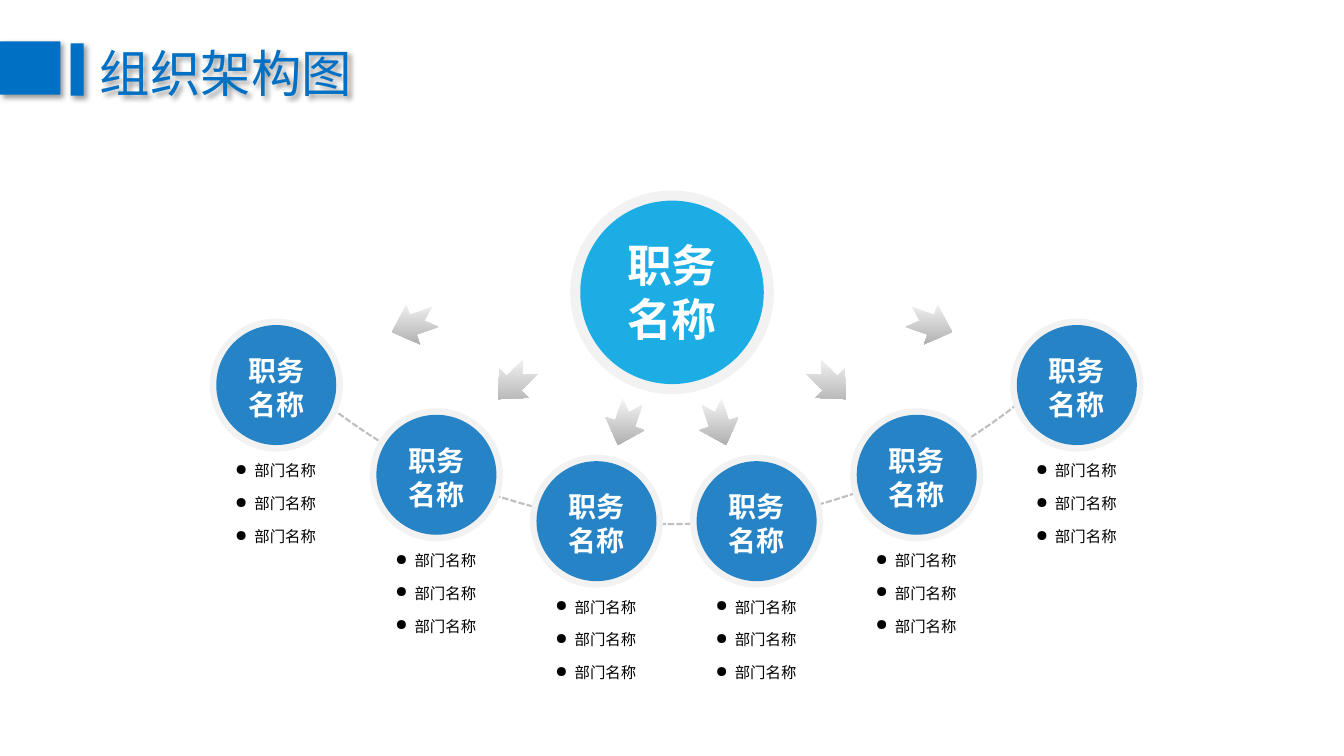
import math

import lxml.etree
import pptx
import pptx.dml.color
import pptx.enum.shapes
import pptx.enum.text
import pptx.oxml.ns
import pptx.util

WIDE, HIGH = 13.33, 7.5
MID = WIDE / 2
TITLE = "组织架构图"
ROLE = ["职务", "名称"]
UNITS = ["部门名称"] * 3
LEVELS = [3.82, 4.71, 5.17, 5.17, 4.71, 3.82]  # centre of each node, left to right
FIRST, PITCH, STEP = 2.74, 1.588, 0.325
BARS = [(0, 0.41, 0.6, 0.53), (0.7, 0.43, 0.13, 0.52)]
ARROWS = [(6.2, 4.2, 108.6), (5.1, 3.8, 134.8), (4.1, 3.22, 160.9)]
ARC = {"radius": 5.525, "base": 5.2, "half": 43.7}
BLUE, RING, HUB, NODE, DASH = "0070C4", "F2F2F2", "1CADE4", "2683C6", "BFBFBF"
FADE = ["FAFAFA", "A6A6A6"]
HEAD = {"size": 36, "name": "Noto Sans CJK SC", "bold": False, "color": BLUE}
BIG = {"size": 32, "name": "Calibri", "bold": True, "color": "FFFFFF"}
SMALL = {**BIG, "size": 20}
ITEM = {"size": 11, "name": "Calibri", "bold": False, "color": "000000"}

KIND = pptx.enum.shapes.MSO_SHAPE
ALIGN = pptx.enum.text.PP_ALIGN
inch = pptx.util.Inches


def rgb(code):
    return pptx.dml.color.RGBColor.from_string(code)


def add(parent, tag, **attrs):
    """Append a DrawingML element with the given attributes."""
    node = lxml.etree.SubElement(parent, pptx.oxml.ns.qn(tag))
    for key, value in attrs.items():
        node.set(key, str(value))
    return node


def shade(shape):
    """Give the shape a soft shadow to the lower right."""
    shape.shadow.inherit = False
    effects = shape._element.spPr.find(pptx.oxml.ns.qn("a:effectLst"))
    outer = add(effects, "a:outerShdw", blurRad=50800, dist=38100,
                dir=2700000, algn="tl", rotWithShape=0)
    add(add(outer, "a:srgbClr", val="000000"), "a:alpha", val=40000)


def style(para, form, align):
    para.alignment = align
    for run in para.runs:
        for key in ("name", "bold"):
            setattr(run.font, key, form[key])
        run.font.size = pptx.util.Pt(form["size"])
        run.font.color.rgb = rgb(form["color"])
        add(run._r.get_or_add_rPr(), "a:ea", typeface=form["name"])


def draw(kind, box, fill):
    shape = slide.shapes.add_shape(kind, *map(inch, box))
    shape.shadow.inherit = False
    shape.line.fill.background()
    shape.fill.solid()
    shape.fill.fore_color.rgb = rgb(fill)
    return shape


def disc(x, y, size, fill):
    draw(KIND.OVAL, (x - size / 2, y - size / 2, size, size), fill)


def write(box, lines, form, wrap=True):
    frame = slide.shapes.add_textbox(*map(inch, box)).text_frame
    frame.word_wrap = wrap
    frame.text = "\n".join(lines)
    for para in frame.paragraphs:
        style(para, form, ALIGN.CENTER)
    return frame


def bullet(para):
    props = para._p.get_or_add_pPr()
    props.set("marL", str(inch(0.19)))
    props.set("indent", str(-inch(0.19)))
    add(props, "a:buChar", char="●")


def arc():
    """Draw the dashed curve that joins the nodes."""
    radius, half = ARC["radius"], ARC["half"]
    top = ARC["base"] - radius
    turns = [math.radians(half * n / 30) for n in range(-30, 31)]
    points = [(inch(MID + radius * math.sin(t)), inch(top + radius * math.cos(t)))
              for t in turns]
    pen = slide.shapes.build_freeform(*points[0])
    pen.add_line_segments(points[1:], close=False)
    curve = pen.convert_to_shape()
    curve.shadow.inherit = False
    curve.fill.background()
    curve.line.color.rgb = rgb(DASH)
    curve.line.width = pptx.util.Pt(1.5)
    add(curve.line._get_or_add_ln(), "a:prstDash", val="sysDash")


def arrow(x, y, turn):
    shape = draw(KIND.NOTCHED_RIGHT_ARROW, (x - 0.225, y - 0.205, 0.45, 0.41), FADE[1])
    shape.rotation = turn
    shape.adjustments[1] = 0.541
    shape.fill.gradient()
    shape.fill.gradient_angle = 270
    for stop, code in zip(shape.fill.gradient_stops, FADE):
        stop.color.rgb = rgb(code)
    shape._element.spPr.find(pptx.oxml.ns.qn("a:gradFill")).set("rotWithShape", "0")


deck = pptx.Presentation()
deck.slide_width, deck.slide_height = inch(WIDE), inch(HIGH)
slide = deck.slides.add_slide(deck.slide_layouts[5])

title = slide.shapes.title
for side, value in zip(("left", "top", "width", "height"), (0.89, 0.36, 2.73, 0.71)):
    setattr(title, side, inch(value))
title.text_frame.text = TITLE
title.text_frame.word_wrap = False
title.text_frame.vertical_anchor = pptx.enum.text.MSO_ANCHOR.MIDDLE
style(title.text_frame.paragraphs[0], HEAD, ALIGN.LEFT)
shade(title)
for bar in BARS:
    shade(draw(KIND.RECTANGLE, bar, BLUE))

arc()
disc(MID, 2.9, 2.02, RING)
disc(MID, 2.9, 1.82, HUB)
write((MID - 0.665, 2.31, 1.33, 1.18), ROLE, BIG)

for col, y in enumerate(LEVELS):
    x = FIRST + col * PITCH
    disc(x, y, 1.32, RING)
    disc(x, y, 1.19, NODE)
    write((x - 0.435, y - 0.36, 0.87, 0.66), ROLE, SMALL)
    for row, unit in enumerate(UNITS):
        box = (x - 0.51, y + 0.71 + row * STEP, 1.01, 0.29)
        bullet(write(box, [unit], ITEM, wrap=False).paragraphs[0])

for x, y, turn in ARROWS:
    arrow(x, y, turn)
    arrow(2 * MID - x, y, 180 - turn)

deck.save("out.pptx")
